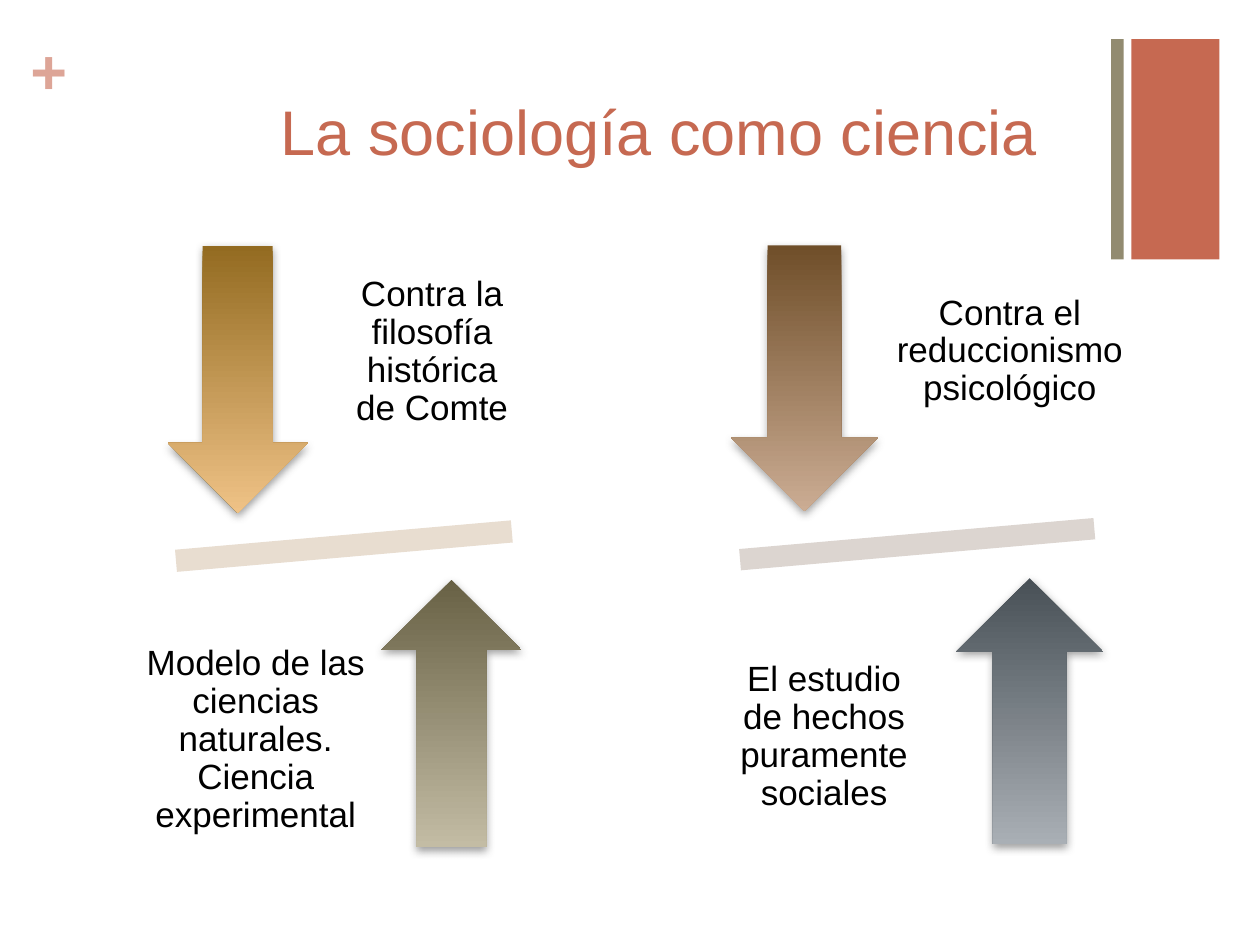
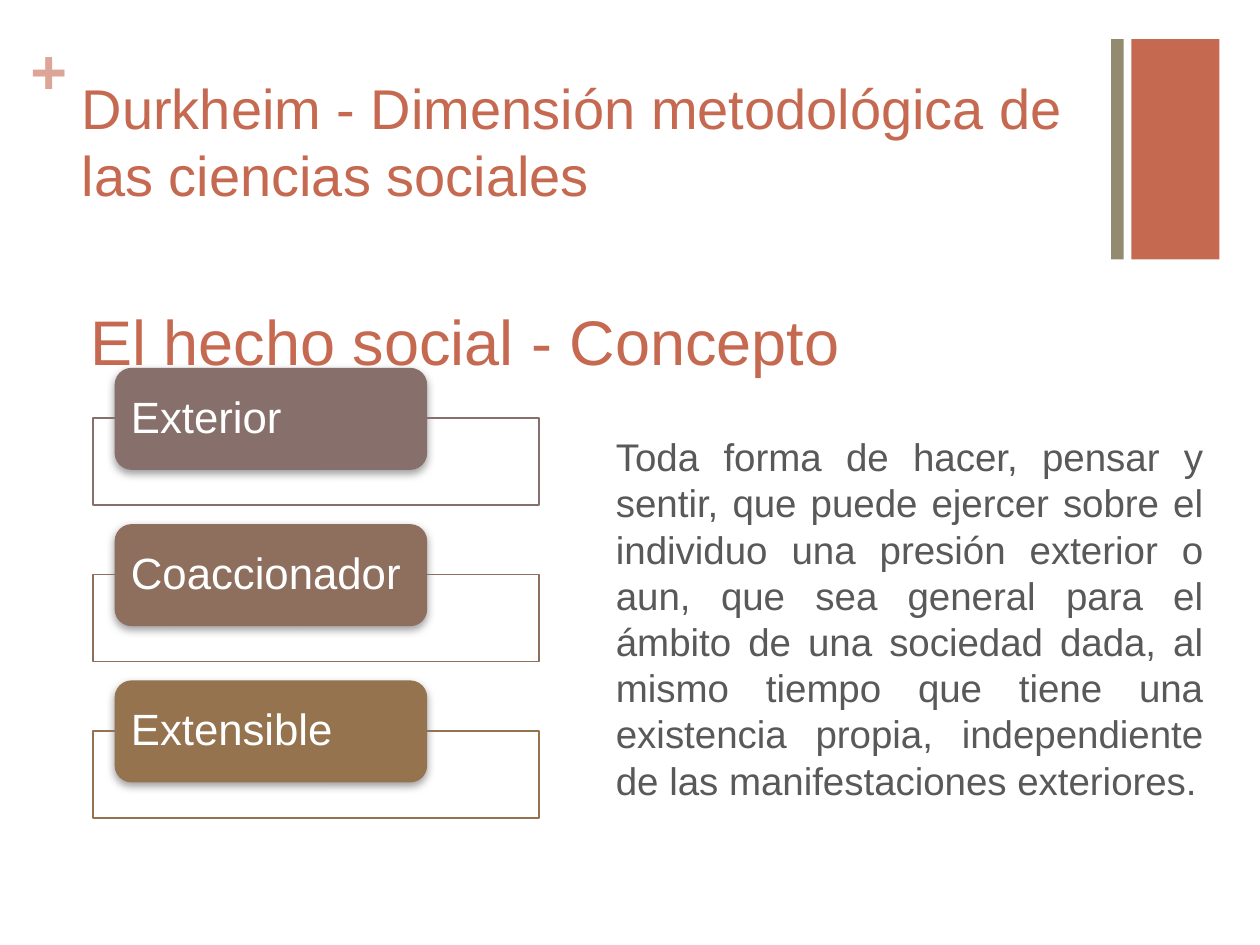
from dataclasses import dataclass

from lxml import etree
from pptx import Presentation
from pptx.dml.color import RGBColor
from pptx.enum.shapes import MSO_SHAPE
from pptx.enum.text import MSO_ANCHOR, PP_ALIGN
from pptx.oxml.ns import qn
from pptx.util import Pt

RECTANGLE = MSO_SHAPE.RECTANGLE
ROUNDED = MSO_SHAPE.ROUNDED_RECTANGLE
DOWN_ARROW = MSO_SHAPE.DOWN_ARROW
UP_ARROW = MSO_SHAPE.UP_ARROW
MINUS = MSO_SHAPE.MATH_MINUS
TOP, MIDDLE = MSO_ANCHOR.TOP, MSO_ANCHOR.MIDDLE
LEFT, CENTER, JUSTIFY = PP_ALIGN.LEFT, PP_ALIGN.CENTER, PP_ALIGN.JUSTIFY


@dataclass(frozen=True)
class Theme:
    font: str = "Arial"
    accent: str = "C66951"
    olive: str = "928B70"
    plus: str = "DDA597"
    body: str = "595959"
    black: str = "000000"
    white: str = "FFFFFF"
    shadow: str = "808080"
    title_size: int = 36
    heading_size: int = 32
    trait_size: int = 25
    body_size: int = 22
    label_size: int = 20


THEME = Theme()
INSETS = (7.2, 3.6, 7.2, 3.6)

BANDS = [
    ((646.5, 22.3, 50.4, 126), THEME.accent),
    ((635, 22.3, 7.2, 126), THEME.olive),
]

SCIENCE_TITLE = ("La sociología como ciencia", (153.4, 49.2, 526.3, 54.7))
BALANCES = [
    {
        "beam": ((65.5, 285.1, 262.1, 54), "E8DDD0"),
        "arrows": [
            (DOWN_ARROW, (95.9, 140.4, 80, 152.7), ("936B21", "EFC286")),
            (UP_ARROW, (218, 331.3, 80, 152.7), ("686145", "C3BCA4")),
        ],
        "labels": [
            ("Contra la filosofía histórica de Comte", (191.5, 121, 110.9, 160.6)),
            ("Modelo de las ciencias naturales. Ciencia experimental",
             (72, 342.7, 148.3, 160.6)),
        ],
    },
    {
        "beam": ((385.9, 285.1, 276.5, 51.8), "DCD5D0"),
        "arrows": [
            (DOWN_ARROW, (417.6, 140.2, 84.2, 152), ("6F4E29", "CBAC93")),
            (UP_ARROW, (546.3, 330.4, 84.2, 152), ("485056", "A9AFB5")),
        ],
        "labels": [
            ("Contra el reduccionismo psicológico", (490.3, 121, 173.5, 159.8)),
            ("El estudio de hechos puramente sociales", (410.4, 341.3, 121, 159.8)),
        ],
    },
]

FACT_HEADING = (
    "Durkheim - Dimensión metodológica de las ciencias sociales",
    (39.6, 38.2, 594.7, 87.8),
)
FACT_TITLE = ("El hecho social - Concepto", (44.6, 169.2, 526.3, 100.8))
FACT_DEFINITION = (
    "Toda forma de hacer, pensar y sentir, que puede ejercer sobre el individuo "
    "una presión exterior o aun, que sea general para el ámbito de una sociedad "
    "dada, al mismo tiempo que tiene una existencia propia, independiente de las "
    "manifestaciones exteriores.",
    (344.9, 244.1, 349.9, 285.8),
)
TRAITS = [("Exterior", "87706B"), ("Coaccionador", "8E6E5C"), ("Extensible", "94734E")]
TRAIT_TOP, TRAIT_STEP, FRAME_DROP = 210.2, 89.3, 28.8


def color(value):
    return RGBColor.from_string(value)


def write(box, text, size, ink, align=LEFT, anchor=TOP, insets=INSETS,
          spacing=None, bold=False, wrap=True):
    frame = box.text_frame
    frame.word_wrap = wrap
    frame.vertical_anchor = anchor
    (frame.margin_left, frame.margin_top,
     frame.margin_right, frame.margin_bottom) = [Pt(inset) for inset in insets]
    para = frame.paragraphs[0]
    para.text = text
    para.alignment = align
    if spacing:
        para.line_spacing = spacing
    para.font.name = THEME.font
    para.font.size = Pt(size)
    para.font.bold = bold
    para.font.color.rgb = color(ink)


def add_text(page, text, place, size, ink, **style):
    box = page.shapes.add_textbox(*map(Pt, place))
    write(box, text, size, ink, **style)


def add_block(page, kind, place, fill, line=None):
    shape = page.shapes.add_shape(kind, *map(Pt, place))
    shape.shadow.inherit = False
    if isinstance(fill, tuple):
        shape.fill.gradient()
        shape.fill.gradient_angle = 270
        for stop, value, position in zip(shape.fill.gradient_stops, fill, (0, 1)):
            stop.color.rgb = color(value)
            stop.position = position
    else:
        shape.fill.solid()
        shape.fill.fore_color.rgb = color(fill)
    if line:
        shape.line.color.rgb = color(line)
        shape.line.width = Pt(1)
    else:
        shape.line.fill.background()
    return shape


def cast_shadow(shape):
    effects = shape._element.spPr.find(qn("a:effectLst"))
    shadow = etree.SubElement(
        effects, qn("a:outerShdw"), blurRad=str(Pt(5)), dist=str(Pt(2)),
        dir="5400000", rotWithShape="0")
    tone = etree.SubElement(shadow, qn("a:srgbClr"), val=THEME.shadow)
    etree.SubElement(tone, qn("a:alpha"), val="75000")


def add_page(deck, title):
    page = deck.slides.add_slide(deck.slide_layouts[6])
    for place, fill in BANDS:
        add_block(page, RECTANGLE, place, fill)
    add_text(page, "+", (17.3, 18, 20.9, 43.9), THEME.title_size, THEME.plus,
             insets=(0, 0, 0, 0), bold=True, wrap=False)
    add_text(page, *title, THEME.title_size, THEME.accent)
    return page


def add_balance(page, balance):
    place, fill = balance["beam"]
    add_block(page, MINUS, place, fill).rotation = 355
    for kind, place, shades in balance["arrows"]:
        cast_shadow(add_block(page, kind, place, shades))
    for text, place in balance["labels"]:
        add_text(page, text, place, THEME.label_size, THEME.black, align=CENTER,
                 anchor=MIDDLE, insets=(11.5,) * 4, spacing=0.9)


def add_trait(page, index, name, tone):
    top = TRAIT_TOP + index * TRAIT_STEP
    add_block(page, RECTANGLE, (53.3, top + FRAME_DROP, 254.9, 49.7), THEME.white, tone)
    tab = add_block(page, ROUNDED, (65.5, top, 178.6, 58.3), tone)
    cast_shadow(tab)
    write(tab, name, THEME.trait_size, THEME.white, anchor=MIDDLE,
          insets=(6.5, 0, 6.5, 0), spacing=0.9)


def main():
    deck = Presentation()
    deck.slide_width, deck.slide_height = Pt(720), Pt(540)

    science = add_page(deck, SCIENCE_TITLE)
    for balance in BALANCES:
        add_balance(science, balance)

    fact = add_page(deck, FACT_TITLE)
    add_text(fact, *FACT_DEFINITION, THEME.body_size, THEME.body, align=JUSTIFY)
    for index, (name, tone) in enumerate(TRAITS):
        add_trait(fact, index, name, tone)
    add_text(fact, *FACT_HEADING, THEME.heading_size, THEME.accent)

    deck.save("out.pptx")


if __name__ == "__main__":
    main()
